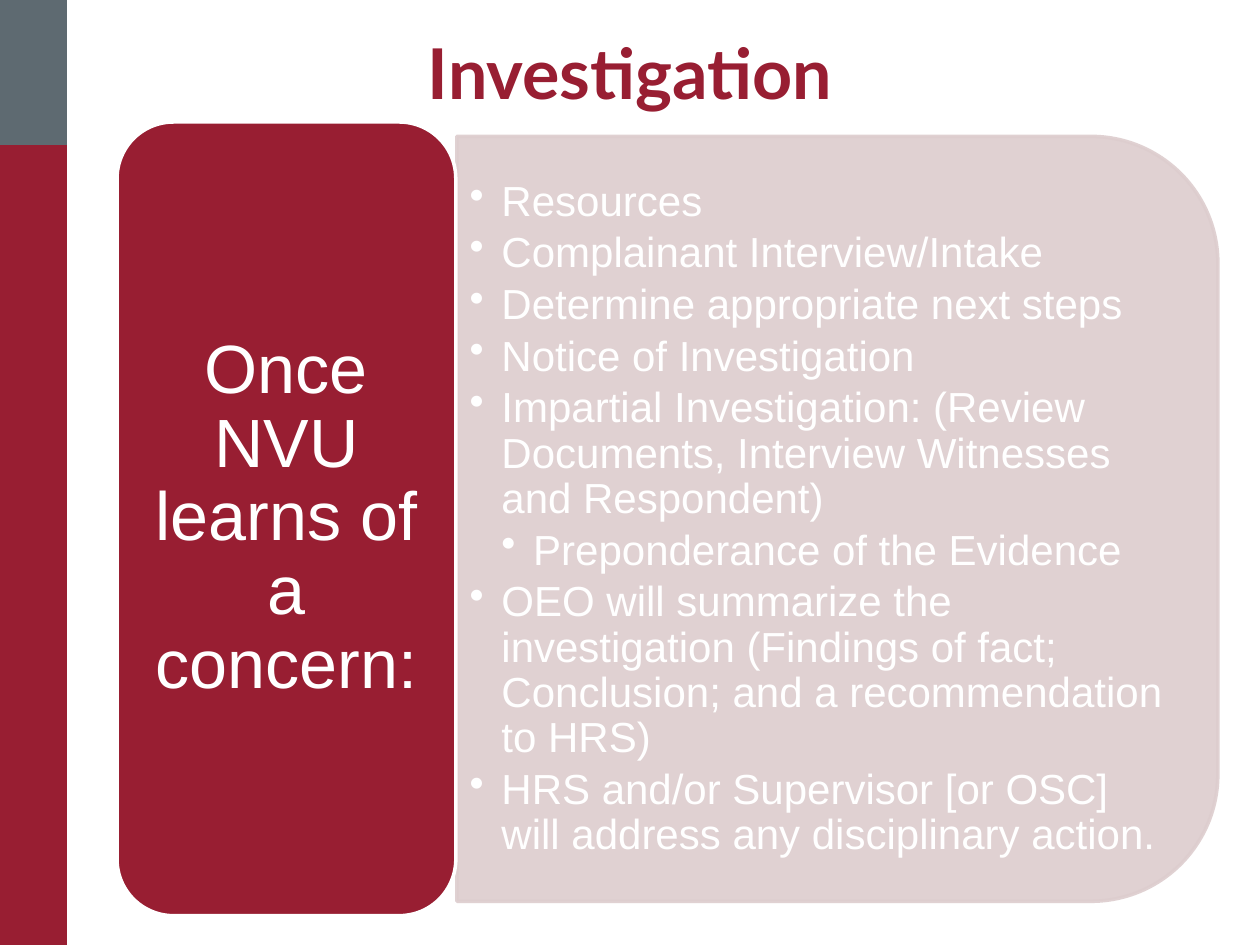
from lxml import etree
from pptx import Presentation
from pptx import util as u
from pptx.dml.color import RGBColor
from pptx.enum import shapes, text
from pptx.oxml.ns import qn

CRIMSON = RGBColor(0x98, 0x1E, 0x32)
GRAY = RGBColor(0x5E, 0x6A, 0x71)
BLUSH = RGBColor(0xDD, 0xCD, 0xCE)
WHITE = RGBColor(0xFF, 0xFF, 0xFF)

SLIDE_WIDTH, SLIDE_HEIGHT = 25.4, 19.05
INDENT = 0.64

STEPS = [
    (0, "Resources"),
    (0, "Complainant Interview/Intake"),
    (0, "Determine appropriate next steps"),
    (0, "Notice of Investigation"),
    (0, "Impartial Investigation: (Review Documents, Interview Witnesses and Respondent)"),
    (1, "Preponderance of the Evidence"),
    (0, "OEO will summarize the investigation (Findings of fact; Conclusion; "
        "and a recommendation to HRS)"),
    (0, "HRS and/or Supervisor [or OSC] will address any disciplinary action."),
]


def add_block(slide, kind, box, fill, line=None):
    block = slide.shapes.add_shape(kind, *map(u.Cm, box))
    block.shadow.inherit = False
    block.fill.solid()
    block.fill.fore_color.rgb = fill
    if line is None:
        block.line.fill.background()
    else:
        block.line.color.rgb = line
        block.line.width = u.Pt(2)
    return block


def add_text_frame(slide, box, anchor, side_inset=0.25, end_inset=0.13):
    frame = slide.shapes.add_textbox(*map(u.Cm, box)).text_frame
    frame.word_wrap = True
    frame.vertical_anchor = anchor
    frame.margin_left = frame.margin_right = u.Cm(side_inset)
    frame.margin_top = frame.margin_bottom = u.Cm(end_inset)
    return frame


def style(paragraph, font, size, color, align, after=0):
    paragraph.alignment = align
    paragraph.line_spacing = 0.9
    paragraph.space_after = u.Pt(after)
    paragraph.font.name = font
    paragraph.font.size = u.Pt(size)
    paragraph.font.color.rgb = color


def add_bullet(paragraph, level):
    paragraph.level = level
    properties = paragraph._p.get_or_add_pPr()
    properties.set("marL", str(u.Cm(INDENT * (level + 1))))
    properties.set("indent", str(u.Cm(-INDENT)))
    bullet = etree.Element(qn("a:buChar"), char="•")
    properties.find(qn("a:defRPr")).addprevious(bullet)


def make_translucent(shape, percent):
    """Set the opacity of both fill and line."""
    for color in shape._element.spPr.iter(qn("a:srgbClr")):
        etree.SubElement(color, qn("a:alpha"), val=str(percent * 1000))


def side_band(slide, box):
    left, top, width, height = box
    gray_height = 2.92
    rect = shapes.MSO_SHAPE.RECTANGLE
    add_block(slide, rect, (left, top + gray_height, width, height - gray_height), CRIMSON)
    add_block(slide, rect, (left, top, width, gray_height), GRAY)


def title(slide, box):
    frame = add_text_frame(slide, box, text.MSO_ANCHOR.BOTTOM, side_inset=1.27)
    heading = frame.paragraphs[0]
    heading.text = "Investigation"
    style(heading, "Lato", 40, CRIMSON, text.PP_ALIGN.CENTER)
    heading.font.bold = True


def steps_panel(slide, box):
    left, top, width, height = box
    panel = add_block(slide, shapes.MSO_SHAPE.ROUND_2_SAME_RECTANGLE, box, BLUSH, BLUSH)
    panel.rotation = 90
    make_translucent(panel, 90)

    text_box = (left + 0.05, top + 0.72, width - 0.81, height - 1.42)
    frame = add_text_frame(slide, text_box, text.MSO_ANCHOR.MIDDLE)
    for number, (level, step) in enumerate(STEPS):
        paragraph = frame.add_paragraph() if number else frame.paragraphs[0]
        paragraph.text = step
        style(paragraph, "Arial", 24, WHITE, text.PP_ALIGN.LEFT, after=3.6)
        add_bullet(paragraph, level)


def lead_card(slide, box):
    left, top, width, height = box
    add_block(slide, shapes.MSO_SHAPE.ROUNDED_RECTANGLE, box, CRIMSON, WHITE)

    pad = 0.34
    text_box = (left + pad, top + pad, width - 2 * pad, height - 2 * pad)
    frame = add_text_frame(slide, text_box, text.MSO_ANCHOR.MIDDLE, 0.41, 0.2)
    lead = frame.paragraphs[0]
    lead.text = "Once NVU learns of a concern:"
    style(lead, "Arial", 39, WHITE, text.PP_ALIGN.CENTER)


def main():
    deck = Presentation()
    deck.slide_width, deck.slide_height = u.Cm(SLIDE_WIDTH), u.Cm(SLIDE_HEIGHT)
    slide = deck.slides.add_slide(deck.slide_layouts[6])

    side_band(slide, (0, 0, 1.35, SLIDE_HEIGHT))
    title(slide, (0, 0.64, SLIDE_WIDTH, 1.8))
    steps_panel(slide, (9.17, 2.79, 15.42, 15.34))
    lead_card(slide, (2.36, 2.46, 6.83, 16))
    deck.save("out.pptx")


if __name__ == "__main__":
    main()
